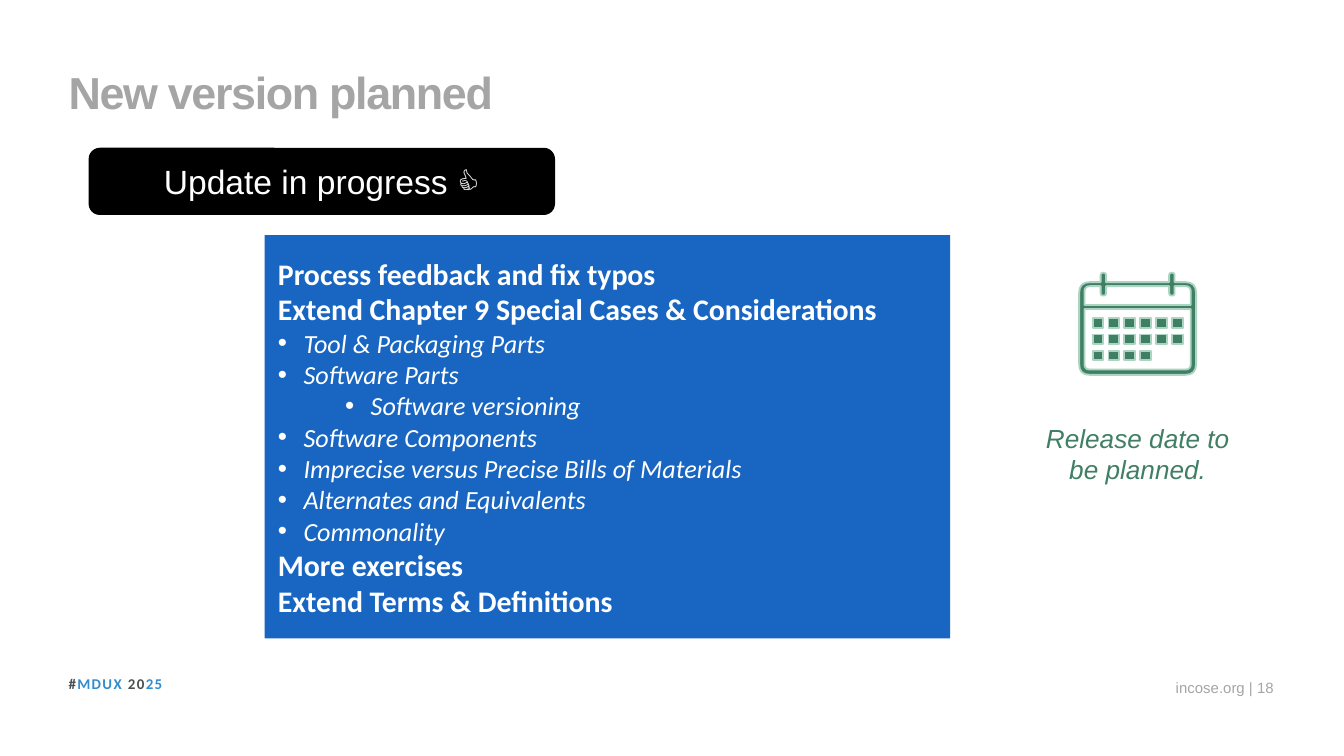
from math import hypot

from lxml import etree
from pptx import Presentation
from pptx.dml.color import RGBColor
from pptx.enum.shapes import MSO_SHAPE
from pptx.enum.text import MSO_ANCHOR, PP_ALIGN
from pptx.oxml.ns import qn
from pptx.util import Pt

PX = 9144  # EMU per px, 100 px to the inch
FINE = 10  # outline steps per px
RECT, ROUND = MSO_SHAPE.RECTANGLE, MSO_SHAPE.ROUNDED_RECTANGLE
TOP, MID, LOW = MSO_ANCHOR.TOP, MSO_ANCHOR.MIDDLE, MSO_ANCHOR.BOTTOM
LEFT, MIDDLE, RIGHT = PP_ALIGN.LEFT, PP_ALIGN.CENTER, PP_ALIGN.RIGHT
COLORS = {
    "black": "000000", "white": "FFFFFF", "blue": "1966C2", "gray": "A5A5A5",
    "dark": "4B5050", "sky": "328CCD", "green": "417F65", "mint": "ABD4C3",
}


def color(name):
    return RGBColor.from_string(COLORS[name])


def bend(corners):
    """Turn (x, y, radius) corners into the points of a closed outline."""
    points = []
    for i, (x, y, r) in enumerate(corners):
        if not r:
            points.append((x, y))
            continue
        ends = []
        for nx, ny, _ in (corners[i - 1], corners[(i + 1) % len(corners)]):
            size = hypot(nx - x, ny - y)
            ends.append((x + r * (nx - x) / size, y + r * (ny - y) / size))
        (ax, ay), (bx, by) = ends
        for t in (0, 0.25, 0.5, 0.75, 1):
            a, m, b = (1 - t) ** 2, 2 * t * (1 - t), t * t
            points.append((a * ax + m * x + b * bx, a * ay + m * y + b * by))
    return points


class Deck:
    def __init__(self, wide):
        self.prs = Presentation()
        self.prs.slide_width = wide * PX
        self.prs.slide_height = wide * PX * 9 // 16
        self.slide = self.prs.slides.add_slide(self.prs.slide_layouts[5])
        self.shapes = self.slide.shapes

    def frame(self, shape, anchor, inset=True):
        frame = shape.text_frame
        frame.word_wrap = True
        frame.vertical_anchor = anchor
        if not inset:
            frame.margin_left = frame.margin_right = 0
            frame.margin_top = frame.margin_bottom = 0
        return frame

    def style(self, para, size, tint, face="Arial", align=LEFT, bold=False,
              slant=False, track=0):
        para.alignment = align
        font = para.font
        font.name, font.size = face, Pt(size)
        font.bold, font.italic = bold, slant
        font.color.rgb = color(tint)
        if track:
            para._p.pPr.find(qn("a:defRPr")).set("spc", str(track))

    def title(self, box, text, **look):
        shape = self.shapes.title
        shape.left, shape.top, shape.width, shape.height = (n * PX for n in box)
        para = self.frame(shape, LOW, False).paragraphs[0]
        para.text = text
        self.style(para, **look)

    def text(self, box, text, anchor=TOP, inset=True, **look):
        shape = self.shapes.add_textbox(*(n * PX for n in box))
        para = self.frame(shape, anchor, inset).paragraphs[0]
        para.text = text
        self.style(para, **look)
        return para

    def block(self, kind, box, fill):
        shape = self.shapes.add_shape(kind, *(n * PX for n in box))
        shape.shadow.inherit = False
        shape.fill.solid()
        shape.fill.fore_color.rgb = color(fill)
        shape.line.fill.background()
        return self.frame(shape, MID)

    def bullet(self, para, level):
        para.level = level
        props = para._p.get_or_add_pPr()
        props.set("marL", str((19 + 50 * level) * PX))
        props.set("indent", str(-19 * PX))
        etree.SubElement(props, qn("a:buFont")).set("typeface", "Arial")
        etree.SubElement(props, qn("a:buChar")).set("char", "•")

    def outline(self, loops, fill, line):
        start, *rest = [[(x * FINE, y * FINE) for x, y in loop] for loop in loops]
        build = self.shapes.build_freeform(*start[0], scale=PX / FINE)
        build.add_line_segments(start[1:], close=True)
        for loop in rest:
            build.move_to(*loop[0])
            build.add_line_segments(loop[1:], close=True)
        shape = build.convert_to_shape()
        shape.shadow.inherit = False
        shape.fill.solid()
        shape.fill.fore_color.rgb = color(fill)
        shape.line.color.rgb = color(line)
        shape.line.width = Pt(1)


def rings(base, tip):
    """Corners of the two calendar rings, from the base line to the tip."""
    return [spot for x in (819, 870) for spot in (
        (x, base, 0), (x, tip, 2), (x + 4, tip, 2), (x + 4, base, 0))]


def main():
    deck = Deck(1000)

    # Title and status
    deck.title((51, 48, 899, 40), "New version planned",
               size=24, tint="gray", bold=True, track=-70)
    status = deck.block(ROUND, (66, 110, 347, 50), "black").paragraphs[0]
    status.text = "Update in progress 👍"
    deck.style(status, 18, "white", align=MIDDLE)

    # Planned changes: level None is a heading, others are bullets
    plan = [
        (None, "Process feedback and fix typos"),
        (None, "Extend Chapter 9 Special Cases & Considerations"),
        (0, "Tool & Packaging Parts"),
        (0, "Software Parts"),
        (1, "Software versioning"),
        (0, "Software Components"),
        (0, "Imprecise versus Precise Bills of Materials"),
        (0, "Alternates and Equivalents"),
        (0, "Commonality"),
        (None, "More exercises\vExtend Terms & Definitions"),
    ]
    frame = deck.block(RECT, (197, 175, 510, 300), "blue")
    for i, (level, text) in enumerate(plan):
        para = frame.add_paragraph() if i else frame.paragraphs[0]
        para.text = text
        head = level is None
        if not head:
            deck.bullet(para, level)
        deck.style(para, 16 if head else 14, "white", "Calibri",
                   bold=head, slant=not head)

    # Calendar: rim, header, page and days
    loops = [
        [(803, 210, 8), *rings(210, 203), (890, 210, 8), (890, 279, 8), (803, 279, 8)],
        [(807, 213, 4), *rings(213, 220), (886, 213, 4), (886, 227, 0), (807, 227, 0)],
        [(807, 230, 0), (886, 230, 0), (886, 275, 4), (807, 275, 4)],
    ]
    for row, count in enumerate((6, 6, 4)):
        for col in range(count):
            x, y = 813 + 11.8 * col, 237 + 12 * row
            loops.append([(x, y, 0), (x + 8, y, 0), (x + 8, y + 7, 0), (x, y + 7, 0)])
    deck.outline([bend(loop) for loop in loops], "green", "mint")
    deck.text((767, 309, 159, 70), "Release date to be planned.",
              size=14, tint="green", align=MIDDLE, slant=True)

    # Footer
    tag = deck.text((51, 505, 199, 10), "", LOW, False,
                    size=8, tint="dark", face="Calibri", bold=True, track=70)
    for text, tint in (("#", "dark"), ("MDUX ", "sky"), ("20", "dark"), ("25", "sky")):
        run = tag.add_run()
        run.text = text
        run.font.color.rgb = color(tint)
    page = deck.text((838, 499, 113, 19), " incose.org | 18 ", LOW, False,
                     size=8, tint="gray", align=RIGHT)
    page.line_spacing = 1.5

    deck.prs.save("out.pptx")


if __name__ == "__main__":
    main()
